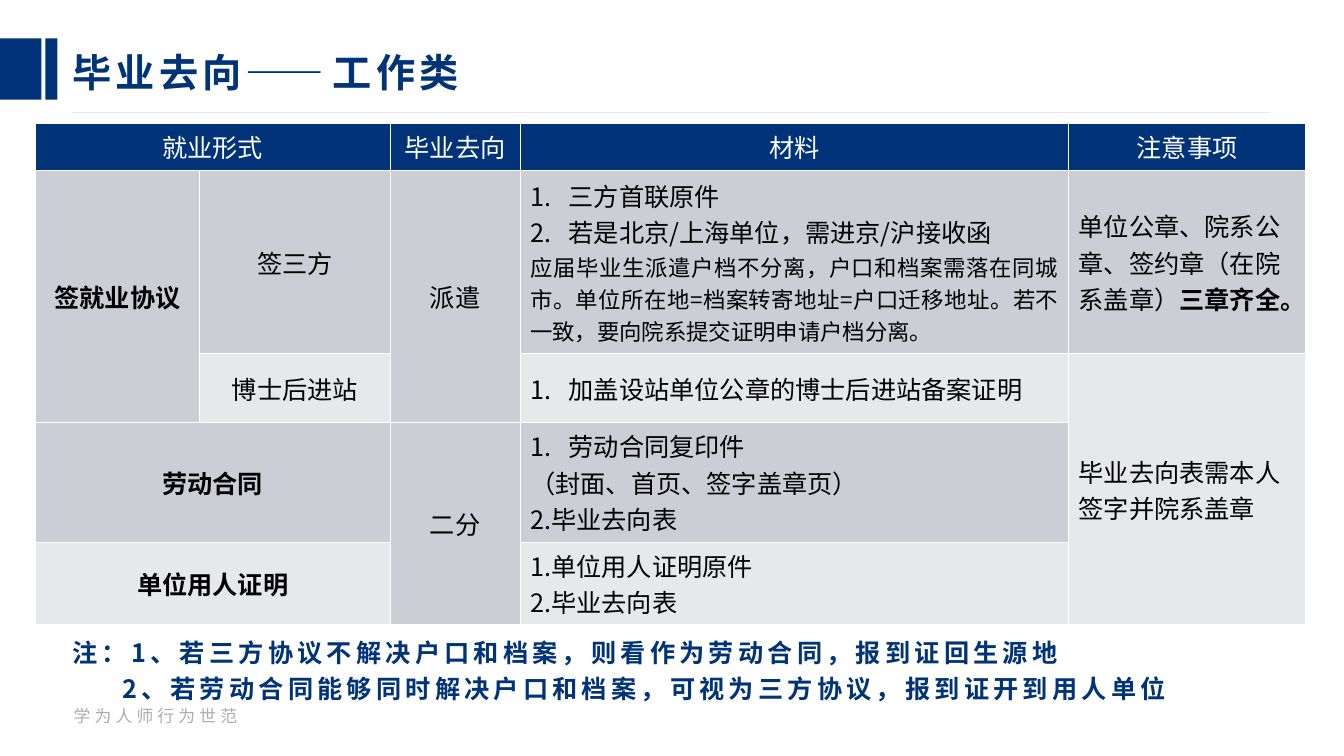
import pptx
import pptx.util
import pptx.dml.color
import pptx.enum.shapes
import pptx.enum.text
import pptx.oxml
import pptx.oxml.ns
from lxml import etree

Inches = pptx.util.Inches
Pt = pptx.util.Pt
RGBColor = pptx.dml.color.RGBColor
ALIGN = pptx.enum.text.PP_ALIGN
ANCHOR = pptx.enum.text.MSO_ANCHOR
AUTO_SIZE = pptx.enum.text.MSO_AUTO_SIZE
qn = pptx.oxml.ns.qn

NAVY = RGBColor(0x00, 0x33, 0x78)
WHITE = RGBColor(0xFF, 0xFF, 0xFF)
BLACK = RGBColor(0x00, 0x00, 0x00)
DARK_BAND = RGBColor(0xCC, 0xCE, 0xD6)
LIGHT_BAND = RGBColor(0xE7, 0xE8, 0xEC)
RULE = RGBColor(0xE4, 0xE6, 0xEA)
MOTTO_GREY = RGBColor(0xAD, 0xAD, 0xAD)

CJK = "Noto Sans CJK SC"
MOTTO_FONT = "Noto Sans CJK JP"
LATIN = "Arial"

COLUMNS = [1.63, 1.89, 1.29, 5.44, 2.35]
ROWS = [0.47, 1.82, 0.68, 1.19, 0.82]
HEADINGS = {0: "就业形式", 2: "毕业去向", 3: "材料", 4: "注意事项"}
MERGES = [(0, 0, 0, 1), (1, 0, 2, 0), (1, 2, 2, 2), (2, 4, 4, 4),
          (3, 0, 3, 1), (3, 2, 4, 2), (4, 0, 4, 1)]

# Centred labels: row, column, text, bold
LABELS = [
    (1, 0, "签就业协议", True), (1, 1, "签三方", False), (1, 2, "派遣", False),
    (2, 1, "博士后进站", False), (3, 0, "劳动合同", True), (3, 2, "二分", False),
    (4, 0, "单位用人证明", True),
]
# Materials by row: text, automatically numbered, size
MATERIALS = {
    1: [("三方首联原件", True, 18),
        ("若是北京/上海单位，需进京/沪接收函", True, 18),
        ("应届毕业生派遣户档不分离，户口和档案需落在同城市。单位所在地=档案转寄地址="
         "户口迁移地址。若不一致，要向院系提交证明申请户档分离。", False, 16)],
    2: [("加盖设站单位公章的博士后进站备案证明", True, 18)],
    3: [("劳动合同复印件", True, 18), ("（封面、首页、签字盖章页）", False, 18),
        ("2.毕业去向表", False, 18)],
    4: [("1.单位用人证明原件", False, 18), ("2.毕业去向表", False, 18)],
}
# Remarks by row: text, bold
REMARKS = {
    1: [("单位公章、院系公章、签约章（在院系盖章）", False), ("三章齐全。", True)],
    2: [("毕业去向表需本人签字并院系盖章", False)],
}


def add_run(paragraph, text, size=18, color=BLACK, bold=False, font=CJK, spacing=0):
    run = paragraph.add_run()
    run.text = text
    run.font.size = Pt(size)
    run.font.bold = bold
    run.font.color.rgb = color
    run.font.name = font
    properties = run.font._element
    if font != LATIN:
        etree.SubElement(properties, qn("a:ea")).set("typeface", font)
    if spacing:
        properties.set("spc", str(spacing * 100))


def next_paragraph(frame, index):
    return frame.paragraphs[0] if index == 0 else frame.add_paragraph()


def indent(paragraph, left, first=0):
    properties = paragraph._p.get_or_add_pPr()
    properties.set("marL", str(Inches(left)))
    properties.set("indent", str(Inches(first)))
    return properties


def number(paragraph):
    properties = indent(paragraph, 0.38, -0.38)
    etree.SubElement(properties, qn("a:buFont")).set("typeface", "+mj-lt")
    etree.SubElement(properties, qn("a:buAutoNum")).set("type", "arabicPeriod")


def clear_margins(frame):
    frame.margin_left = frame.margin_right = 0
    frame.margin_top = frame.margin_bottom = 0


def add_text_box(slide, left, top, width, height):
    frame = slide.shapes.add_textbox(
        Inches(left), Inches(top), Inches(width), Inches(height)).text_frame
    frame.word_wrap = True
    frame.auto_size = AUTO_SIZE.SHAPE_TO_FIT_TEXT
    clear_margins(frame)
    return frame


def add_bar(slide, left, width):
    bar = slide.shapes.add_shape(
        pptx.enum.shapes.MSO_SHAPE.RECTANGLE,
        Inches(left), Inches(0.38), Inches(width), Inches(0.61))
    bar.shadow.inherit = False
    bar.fill.solid()
    bar.fill.fore_color.rgb = NAVY
    bar.line.fill.background()


def add_rule(slide):
    rule = slide.shapes.add_connector(
        pptx.enum.shapes.MSO_CONNECTOR.STRAIGHT,
        Inches(0.72), Inches(1.11), Inches(12.6), Inches(1.11))
    rule.line.color.rgb = RULE
    rule.line.width = Pt(0.5)
    etree.SubElement(rule._element.spPr, qn("a:effectLst"))


def add_motto(slide):
    frame = add_text_box(slide, 0.73, 7.0, 1.84, 0.2)
    add_run(frame.paragraphs[0], "学为人师行为世范", 12, MOTTO_GREY,
            font=MOTTO_FONT, spacing=3)


def style_cell(cell, fill):
    properties = cell._tc.get_or_add_tcPr()
    for side in ("a:lnL", "a:lnR", "a:lnT", "a:lnB"):
        border = etree.SubElement(properties, qn(side), w=str(Pt(1)))
        paint = etree.SubElement(border, qn("a:solidFill"))
        etree.SubElement(paint, qn("a:srgbClr")).set("val", str(WHITE))
    cell.fill.solid()
    cell.fill.fore_color.rgb = fill
    cell.vertical_anchor = ANCHOR.MIDDLE


def add_label(cell, text, **style):
    paragraph = cell.text_frame.paragraphs[0]
    paragraph.alignment = ALIGN.CENTER
    add_run(paragraph, text, **style)


def add_destination_table(slide):
    table = slide.shapes.add_table(
        len(ROWS), len(COLUMNS), Inches(0.35), Inches(1.22),
        Inches(sum(COLUMNS)), Inches(sum(ROWS))).table
    for column, width in zip(table.columns, COLUMNS):
        column.width = Inches(width)
    for row, height in zip(table.rows, ROWS):
        row.height = Inches(height)

    # Bands and merged areas
    for r in range(len(ROWS)):
        fill = NAVY if r == 0 else DARK_BAND if r % 2 else LIGHT_BAND
        for c in range(len(COLUMNS)):
            style_cell(table.cell(r, c), fill)
    for top, left, bottom, right in MERGES:
        table.cell(top, left).merge(table.cell(bottom, right))

    # Contents
    for c, text in HEADINGS.items():
        add_label(table.cell(0, c), text, color=WHITE, font=LATIN if c == 4 else CJK)
    for r, c, text, bold in LABELS:
        add_label(table.cell(r, c), text, bold=bold)
    for r, items in MATERIALS.items():
        for i, (text, numbered, size) in enumerate(items):
            paragraph = next_paragraph(table.cell(r, 3).text_frame, i)
            paragraph.alignment = ALIGN.JUSTIFY
            if numbered:
                number(paragraph)
            add_run(paragraph, text, size)
    for r, parts in REMARKS.items():
        for text, bold in parts:
            add_run(table.cell(r, 4).text_frame.paragraphs[0], text, bold=bold, font=LATIN)


def set_title(slide, text):
    title = slide.shapes.title
    title.left, title.top = Inches(0.72), Inches(0.38)
    title.width, title.height = Inches(10.1), Inches(0.73)
    frame = title.text_frame
    clear_margins(frame)
    frame.auto_size = AUTO_SIZE.NONE
    frame.vertical_anchor = ANCHOR.MIDDLE
    paragraph = frame.paragraphs[0]
    paragraph.alignment = ALIGN.JUSTIFY
    paragraph.line_spacing = 0.9
    add_run(paragraph, text, 28, NAVY, bold=True, spacing=3)


def add_notes_below(slide):
    frame = add_text_box(slide, 0.72, 6.26, 12.42, 0.7)
    notes = [("注：1、若三方协议不解决户口和档案，则看作为劳动合同，报到证回生源地", 0),
             ("2、若劳动合同能够同时解决户口和档案，可视为三方协议，报到证开到用人单位", 0.49)]
    for i, (text, left) in enumerate(notes):
        paragraph = next_paragraph(frame, i)
        paragraph.line_spacing = 1.2
        indent(paragraph, left)
        add_run(paragraph, text, color=NAVY, bold=True, spacing=3)


def main():
    deck = pptx.Presentation()
    deck.slide_width, deck.slide_height = Inches(13.33), Inches(7.5)
    slide = deck.slides.add_slide(deck.slide_layouts[5])
    # Page frame
    add_bar(slide, -0.01, 0.42)
    add_bar(slide, 0.45, 0.12)
    add_rule(slide)
    add_motto(slide)
    # Content
    set_title(slide, "毕业去向——工作类")
    add_destination_table(slide)
    add_notes_below(slide)
    deck.save("out.pptx")


if __name__ == "__main__":
    main()
